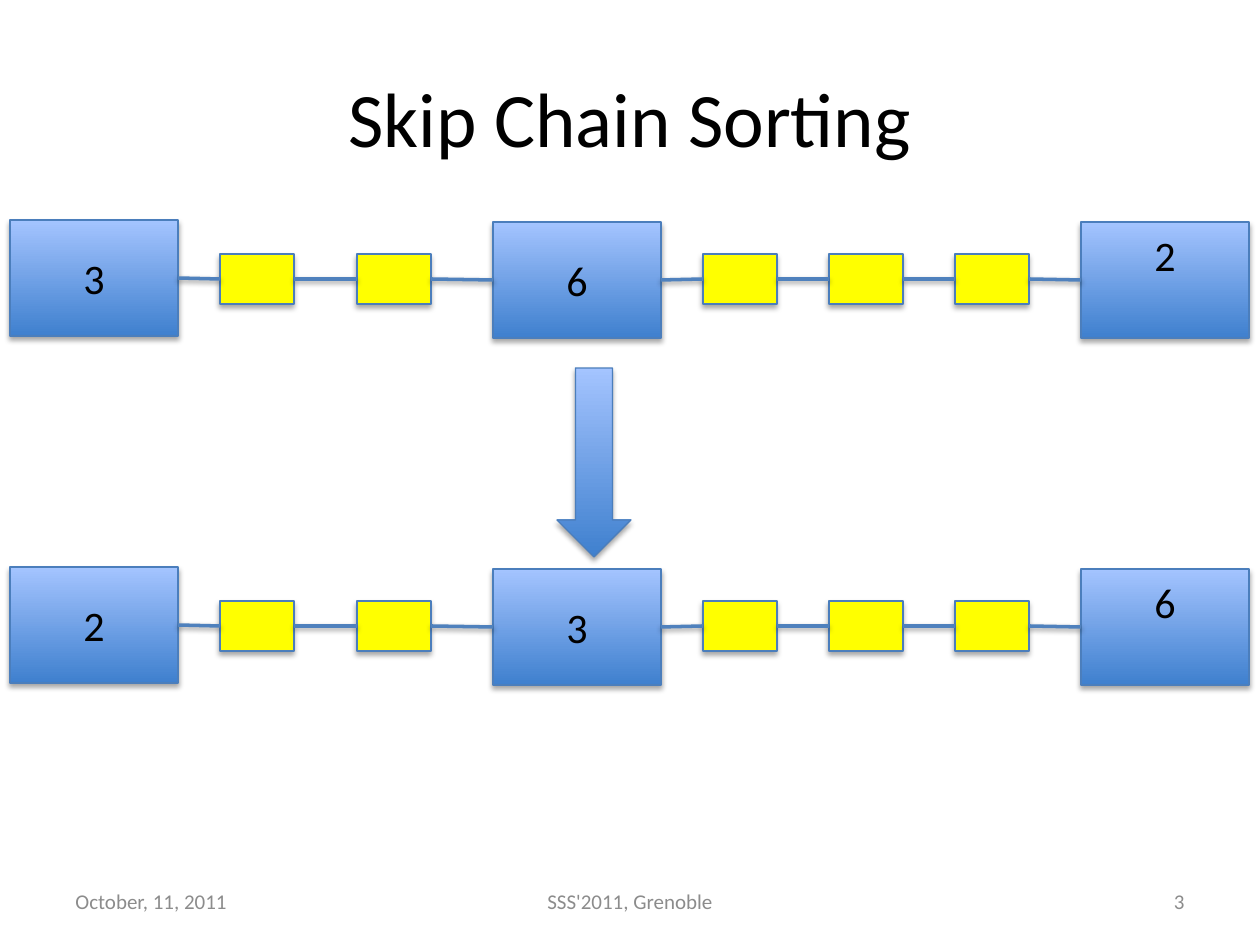
import itertools

import lxml.etree
import pptx
import pptx.dml.color
import pptx.enum.shapes
import pptx.enum.text
import pptx.oxml.ns
import pptx.util

RGBColor = pptx.dml.color.RGBColor
Align = pptx.enum.text.PP_ALIGN
Preset = pptx.enum.shapes.MSO_SHAPE

BLACK = RGBColor(0x00, 0x00, 0x00)
GREY = RGBColor(0x8C, 0x8C, 0x8C)
YELLOW = RGBColor(0xFF, 0xFF, 0x00)
DEEP_BLUE = RGBColor(0x3F, 0x80, 0xCE)
PALE_BLUE = RGBColor(0xA4, 0xC4, 0xFF)
OUTLINE = RGBColor(0x4B, 0x7E, 0xBC)
LINK = RGBColor(0x4F, 0x81, 0xBD)

FONT = "Calibri"
EMU_PER_PX = 914400 / 126
INSET = 6
LINE_HEIGHT = 51

NODES = [(10, 220, INSET), (493, 222, INSET), (1081, 222, INSET + LINE_HEIGHT)]
SKIP_LEFTS = [220, 357, 703, 829, 955]
SKIP_TOP = 254
ROW_STEP = 347


def px(length):
    return pptx.util.Emu(round(length * EMU_PER_PX))


class SlideBuilder:
    def __init__(self, slide):
        self.slide = slide
        self.shapes = slide.shapes

    def add_text(self, shape, text, size, color, align):
        frame = shape.text_frame
        frame.word_wrap = True
        frame.vertical_anchor = pptx.enum.text.MSO_ANCHOR.MIDDLE
        paragraph = frame.paragraphs[0]
        paragraph.alignment = align
        run = paragraph.add_run()
        run.text = text
        run.font.name = FONT
        run.font.size = pptx.util.Pt(size)
        run.font.color.rgb = color

    def add_shadow(self, shape, distance, opacity):
        qn = pptx.oxml.ns.qn
        effects = lxml.etree.SubElement(shape.element.spPr, qn("a:effectLst"))
        shadow = lxml.etree.SubElement(
            effects, qn("a:outerShdw"), blurRad=str(pptx.util.Pt(3.1)),
            dist=str(pptx.util.Pt(distance)), dir="5400000", rotWithShape="0")
        color = lxml.etree.SubElement(shadow, qn("a:srgbClr"), val=str(BLACK))
        lxml.etree.SubElement(color, qn("a:alpha"), val=str(opacity * 1000))

    def title(self, text, left, top, width, height):
        title = self.slide.shapes.title
        title.left, title.top = px(left), px(top)
        title.width, title.height = px(width), px(height)
        self.add_text(title, text, 44, BLACK, Align.CENTER)

    def footer(self, text, left, width, align):
        box = self.shapes.add_textbox(px(left), px(876), px(width), px(50))
        self.add_text(box, text, 12, GREY, align)

    def shape(self, preset, left, top, width, height, color=None):
        shape = self.shapes.add_shape(preset, px(left), px(top), px(width), px(height))
        if color is None:
            shape.fill.gradient()
            shape.fill.gradient_angle = 90
            for stop, stop_color in zip(shape.fill.gradient_stops, (DEEP_BLUE, PALE_BLUE)):
                stop.color.rgb = stop_color
        else:
            shape.fill.solid()
            shape.fill.fore_color.rgb = color
        shape.line.color.rgb = OUTLINE
        shape.line.width = pptx.util.Pt(0.75)
        self.add_shadow(shape, 1.8, 35)
        return shape

    def node(self, text, left, top, bottom_inset):
        node = self.shape(Preset.RECTANGLE, left, top, 168, 116)
        self.add_text(node, text, 24, BLACK, Align.CENTER)
        node.text_frame.margin_bottom = px(bottom_inset)
        return node

    def link(self, start, end):
        link = self.shapes.add_connector(
            pptx.enum.shapes.MSO_CONNECTOR.STRAIGHT, start.left, start.top, end.left, end.top)
        link.begin_connect(start, 3)
        link.end_connect(end, 1)
        link.line.color.rgb = LINK
        link.line.width = pptx.util.Pt(2)
        self.add_shadow(link, 1.6, 38)

    def chain(self, values, offset=0):
        boxes = [self.node(value, left, top + offset, inset)
                 for value, (left, top, inset) in zip(values, NODES)]
        boxes += [self.shape(Preset.RECTANGLE, left, SKIP_TOP + offset, 74, 50, YELLOW)
                  for left in SKIP_LEFTS]
        boxes.sort(key=lambda box: box.left)
        for start, end in itertools.pairwise(boxes):
            self.link(start, end)

    def grouped_chain(self, values, offset):
        self.shapes = self.slide.shapes.add_group_shape().shapes
        self.chain(values, offset)
        self.shapes = self.slide.shapes


def main():
    presentation = pptx.Presentation()
    presentation.slide_width = px(1260)
    presentation.slide_height = px(945)
    builder = SlideBuilder(presentation.slides.add_slide(presentation.slide_layouts[5]))
    builder.title("Skip Chain Sorting", 63, 38, 1134, 158)
    builder.footer("October, 11, 2011", 63, 294, Align.LEFT)
    builder.footer("SSS'2011, Grenoble", 430, 400, Align.CENTER)
    builder.footer("3", 903, 294, Align.RIGHT)
    builder.chain(["3", "6", "2"])
    builder.shape(Preset.DOWN_ARROW, 557, 368, 74, 189)
    builder.grouped_chain(["2", "3", "6"], ROW_STEP)
    presentation.save("out.pptx")


if __name__ == "__main__":
    main()
